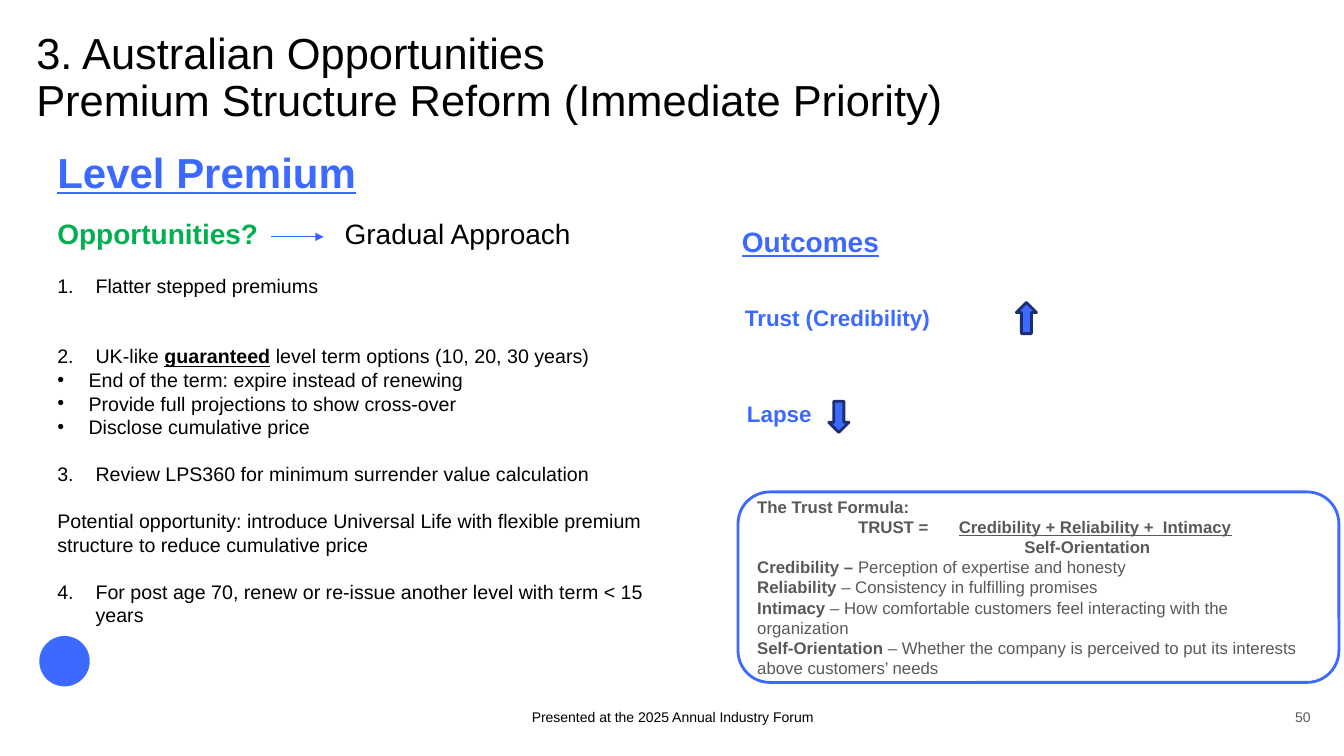
from lxml import etree
from pptx import Presentation
from pptx.dml.color import RGBColor
from pptx.enum.shapes import MSO_CONNECTOR, MSO_SHAPE
from pptx.enum.text import MSO_ANCHOR, PP_ALIGN
from pptx.oxml.ns import qn
from pptx.util import Inches, Pt

TOP, MIDDLE, BOTTOM = MSO_ANCHOR.TOP, MSO_ANCHOR.MIDDLE, MSO_ANCHOR.BOTTOM
LEFT, CENTER, RIGHT = PP_ALIGN.LEFT, PP_ALIGN.CENTER, PP_ALIGN.RIGHT
OVAL, ROUND, ARROW = MSO_SHAPE.OVAL, MSO_SHAPE.ROUNDED_RECTANGLE, MSO_SHAPE.DOWN_ARROW
STRAIGHT = MSO_CONNECTOR.STRAIGHT

COLORS = {"black": "000000", "blue": "3C69FF", "line": "3664FE", "navy": "1A2E70",
          "green": "00B050", "gray": "595959", "page": "5B5B5B"}
FONT = "Arial"
GAP = 16.8

TITLE = "3. Australian Opportunities\nPremium Structure Reform (Immediate Priority)"
FOOTER = "Presented at the 2025 Annual Industry Forum"
STEPS = [
    {"runs": [("Opportunities?\t", {"bold": True, "color": "green"}),
              ("Gradual Approach", {})], "size": 20, "tabs": [2.85]},
    {"runs": "Flatter stepped premiums", "num": 1, "before": GAP},
    {"runs": [("UK-like ", {}), ("guaranteed", {"bold": True, "under": True}),
              (" level term options (10, 20, 30 years)", {})], "num": 2, "before": 2 * GAP},
    {"runs": "End of the term: expire instead of renewing", "dot": True},
    {"runs": "Provide full projections to show cross-over", "dot": True},
    {"runs": "Disclose cumulative price", "dot": True},
    {"runs": "Review LPS360 for minimum surrender value calculation", "num": 3, "before": GAP},
    {"runs": "Potential opportunity: introduce Universal Life with flexible premium "
             "structure to reduce cumulative price", "before": GAP},
    {"runs": "For post age 70, renew or re-issue another level with term < 15 years",
     "num": 4, "before": GAP},
]
TERMS = [
    ("Credibility –", " Perception of expertise and honesty"),
    ("Reliability", " – Consistency in fulfilling promises"),
    ("Intimacy", " – How comfortable customers feel interacting with the organization"),
    ("Self-Orientation",
     " – Whether the company is perceived to put its interests above customers’ needs"),
]
FORMULA = [{"runs": [
    ("The Trust Formula:\n\tTRUST =\t", {"bold": True}),
    ("Credibility + Reliability +  Intimacy", {"bold": True, "under": True}),
    ("\n\t\t\tSelf-Orientation", {"bold": True}),
], "tabs": [1, 2, 2.65]}] + [
    {"runs": [(term, {"bold": True}), (text, {})]} for term, text in TERMS]
LABELS = [
    ("Level Premium", (0.47, 1.4, 3.19, 0.61), 30, True),
    ("Outcomes", (7.26, 2.18, 2.23, 0.44), 20, True),
    ("Trust (Credibility)", (7.29, 2.97, 2.21, 0.37), 16, False),
    ("Lapse", (7.31, 3.92, 0.91, 0.37), 16, False),
]
ARROWS = [((10.08, 3, 0.2, 0.31), 180), ((8.22, 3.98, 0.2, 0.31), 0)]


def rgb(name):
    return RGBColor.from_string(COLORS[name])


def add_list(para, num=None, dot=False, tabs=()):
    props = para._p.get_or_add_pPr()
    if num or dot:
        indent = Inches(0.38 if num else 0.31)
        props.set("marL", str(indent))
        props.set("indent", str(-indent))
        tint = etree.SubElement(props, qn("a:buClr"))
        etree.SubElement(tint, qn("a:srgbClr"), val=COLORS["black"])
        etree.SubElement(props, qn("a:buFont"), typeface=FONT)
        if num:
            etree.SubElement(props, qn("a:buAutoNum"), type="arabicPeriod", startAt=str(num))
        else:
            etree.SubElement(props, qn("a:buChar"), char="•")
    if tabs:
        stops = etree.SubElement(props, qn("a:tabLst"))
        for tab in tabs:
            etree.SubElement(stops, qn("a:tab"), pos=str(Inches(tab)), algn="l")


def write(shape, text, size=14, color="black", bold=False, under=False, align=LEFT,
          anchor=TOP, inset=(0.1, 0.05), leading=None):
    frame = shape.text_frame
    frame.word_wrap = True
    frame.vertical_anchor = anchor
    frame.margin_left = frame.margin_right = Inches(inset[0])
    frame.margin_top = frame.margin_bottom = Inches(inset[1])
    items = [{"runs": text}] if isinstance(text, str) else text
    for i, item in enumerate(items):
        para = frame.add_paragraph() if i else frame.paragraphs[0]
        para.alignment = align
        para.space_before = Pt(item.get("before", 0))
        if leading:
            para.line_spacing = leading
        add_list(para, item.get("num"), item.get("dot"), item.get("tabs", ()))
        runs = item["runs"]
        for words, style in [(runs, {})] if isinstance(runs, str) else runs:
            for j, part in enumerate(words.split("\n")):
                if j:
                    para.add_line_break()
                if not part:
                    continue
                run = para.add_run()
                run.text = part
                font = run.font
                font.name = FONT
                font.size = Pt(item.get("size", size))
                font.bold = style.get("bold", bold)
                font.underline = style.get("under", under)
                font.color.rgb = rgb(style.get("color", color))


def add_text(slide, text, box, **style):
    write(slide.shapes.add_textbox(*map(Inches, box)), text, **style)


def add_form(slide, kind, box, fill=None, line=None, turn=0):
    form = slide.shapes.add_shape(kind, *map(Inches, box))
    form.shadow.inherit = False
    form.rotation = turn
    if fill:
        form.fill.solid()
        form.fill.fore_color.rgb = rgb(fill)
    else:
        form.fill.background()
    if line:
        form.line.color.rgb = rgb(line)
        form.line.width = Pt(2)
    else:
        form.line.fill.background()
    return form


def add_arrow(slide, start, end):
    arrow = slide.shapes.add_connector(STRAIGHT, *map(Inches, start + end))
    arrow.line.color.rgb = rgb("line")
    arrow.line.width = Pt(0.75)
    etree.SubElement(arrow.line._get_or_add_ln(), qn("a:tailEnd"), type="triangle")
    etree.SubElement(arrow._element.spPr, qn("a:effectLst"))


def main():
    deck = Presentation()
    deck.slide_width, deck.slide_height = Inches(13.33), Inches(7.5)
    slide = deck.slides.add_slide(deck.slide_layouts[6])

    add_form(slide, OVAL, (0.39, 6.31, 0.5, 0.5), fill="blue")
    add_text(slide, TITLE, (0.36, 0.32, 12.18, 1.09), size=31, inset=(0, 0), leading=0.9)
    add_text(slide, "50", (12.54, 7, 0.46, 0.2), size=10, color="page", align=RIGHT,
             anchor=BOTTOM, inset=(0, 0))
    add_text(slide, FOOTER, (4.42, 7, 4.5, 0.2), size=10, align=CENTER, anchor=BOTTOM,
             inset=(0, 0))
    add_text(slide, STEPS, (0.47, 2.1, 6.5, 4.68))
    add_arrow(slide, (2.69, 2.35), (3.21, 2.35))
    for text, box, size, under in LABELS:
        add_text(slide, text, box, size=size, color="blue", bold=True, under=under)
    for box, turn in ARROWS:
        add_form(slide, ARROW, box, fill="blue", line="navy", turn=turn)
    panel = add_form(slide, ROUND, (7.32, 4.88, 5.96, 1.89), line="blue")
    write(panel, FORMULA, size=12, color="gray", anchor=MIDDLE)
    deck.save("out.pptx")


if __name__ == "__main__":
    main()
